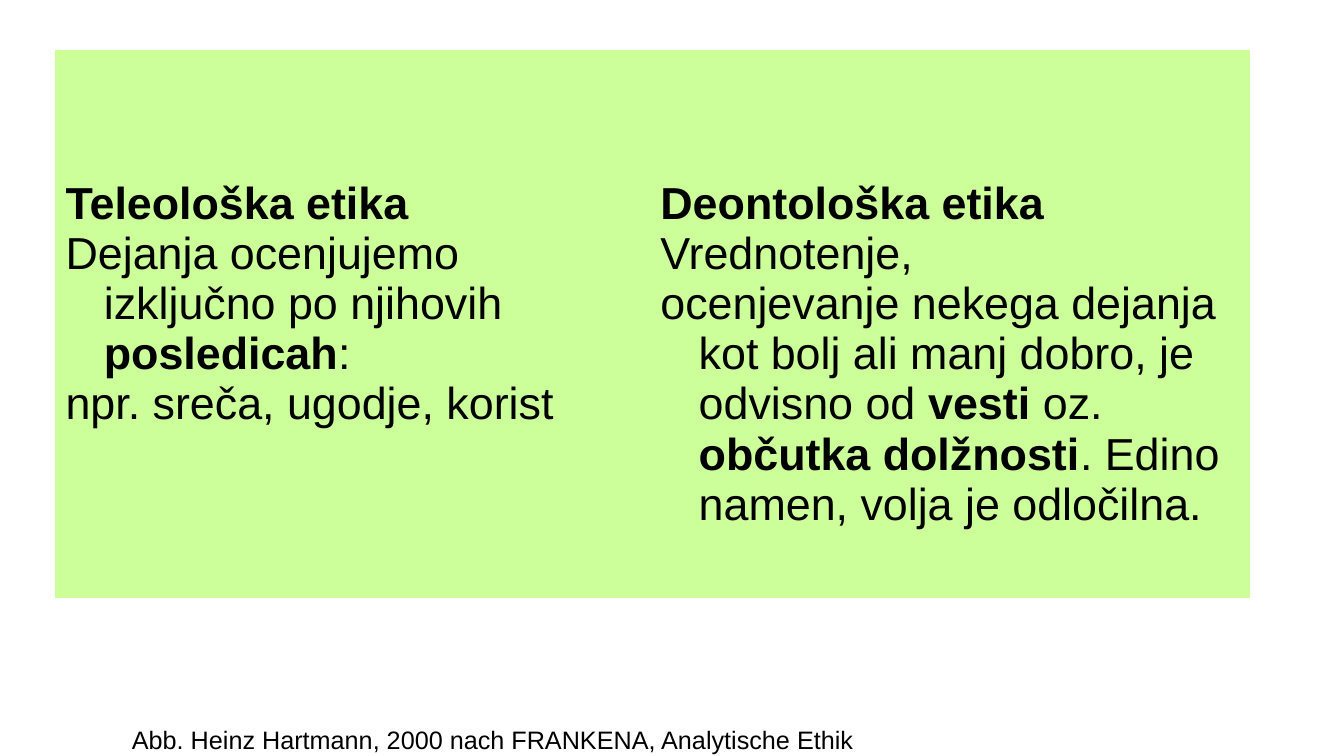
from pptx import Presentation
from pptx import util as u
from pptx.dml.color import RGBColor
from pptx.enum import text

GREEN = RGBColor(0xCC, 0xFF, 0x99)
BLACK = RGBColor(0, 0, 0)
COLS = [2.96, 2.94, 2.84, 3.11]
ROWS = [4.9, 0.53]
ETHICS = [
    [
        [("Teleološka etika", True)],
        [("Dejanja ocenjujemo izključno po njihovih ", False),
         ("posledicah", True), (":", False)],
        [("npr. sreča, ugodje, korist", False)],
    ],
    [
        [("Deontološka etika", True)],
        [("Vrednotenje,", False)],
        [("ocenjevanje nekega dejanja kot bolj ali manj dobro, je odvisno od ", False),
         ("vesti ", True), ("oz. ", False), ("občutka dolžnosti", True),
         (". Edino namen, volja je odločilna.", False)],
    ],
]


def add_run(para, words, size, bold=False):
    run = para.add_run()
    run.text = words
    run.font.name = "Arial"
    run.font.size = u.Pt(size)
    run.font.bold = bold
    run.font.color.rgb = BLACK


deck = Presentation()
deck.slide_width = u.Inches(13.33)
deck.slide_height = u.Inches(7.5)
slide = deck.slides.add_slide(deck.slide_layouts[6])

frame = slide.shapes.add_table(
    len(ROWS), len(COLS), u.Inches(0.55), u.Inches(0.5),
    u.Inches(sum(COLS)), u.Inches(sum(ROWS)))
style = frame._element.xpath(".//a:tableStyleId")[0]
style.text = "{2D5ABB26-0587-4C30-8999-92F81FD0307C}"
table = frame.table
table.first_row = False
table.horz_banding = False
for col, width in zip(table.columns, COLS):
    col.width = u.Inches(width)
for row, height in zip(table.rows, ROWS):
    row.height = u.Inches(height)
for cell in table.iter_cells():
    cell.fill.solid()
    cell.fill.fore_color.rgb = GREEN

for side, paras in enumerate(ETHICS):
    cell = table.cell(0, 2 * side)
    cell.merge(table.cell(0, 2 * side + 1))
    cell.margin_top = u.Inches(1.27)
    cell.margin_right = u.Inches(0.15)
    for i, runs in enumerate(paras):
        para = cell.text_frame.add_paragraph() if i else cell.text_frame.paragraphs[0]
        props = para._p.get_or_add_pPr()
        props.set("marL", str(u.Inches(0.38)))
        props.set("indent", str(-u.Inches(0.38)))
        for words, bold in runs:
            add_run(para, words, 32, bold)

credit = slide.shapes.add_textbox(
    u.Inches(1.21), u.Inches(7.14), u.Inches(8.72), u.Inches(0.4)).text_frame
credit.word_wrap = True
credit.vertical_anchor = text.MSO_ANCHOR.MIDDLE
credit.auto_size = text.MSO_AUTO_SIZE.SHAPE_TO_FIT_TEXT
add_run(credit.paragraphs[0],
        "Abb. Heinz Hartmann, 2000 nach FRANKENA, Analytische Ethik", 18)

deck.save("out.pptx")
